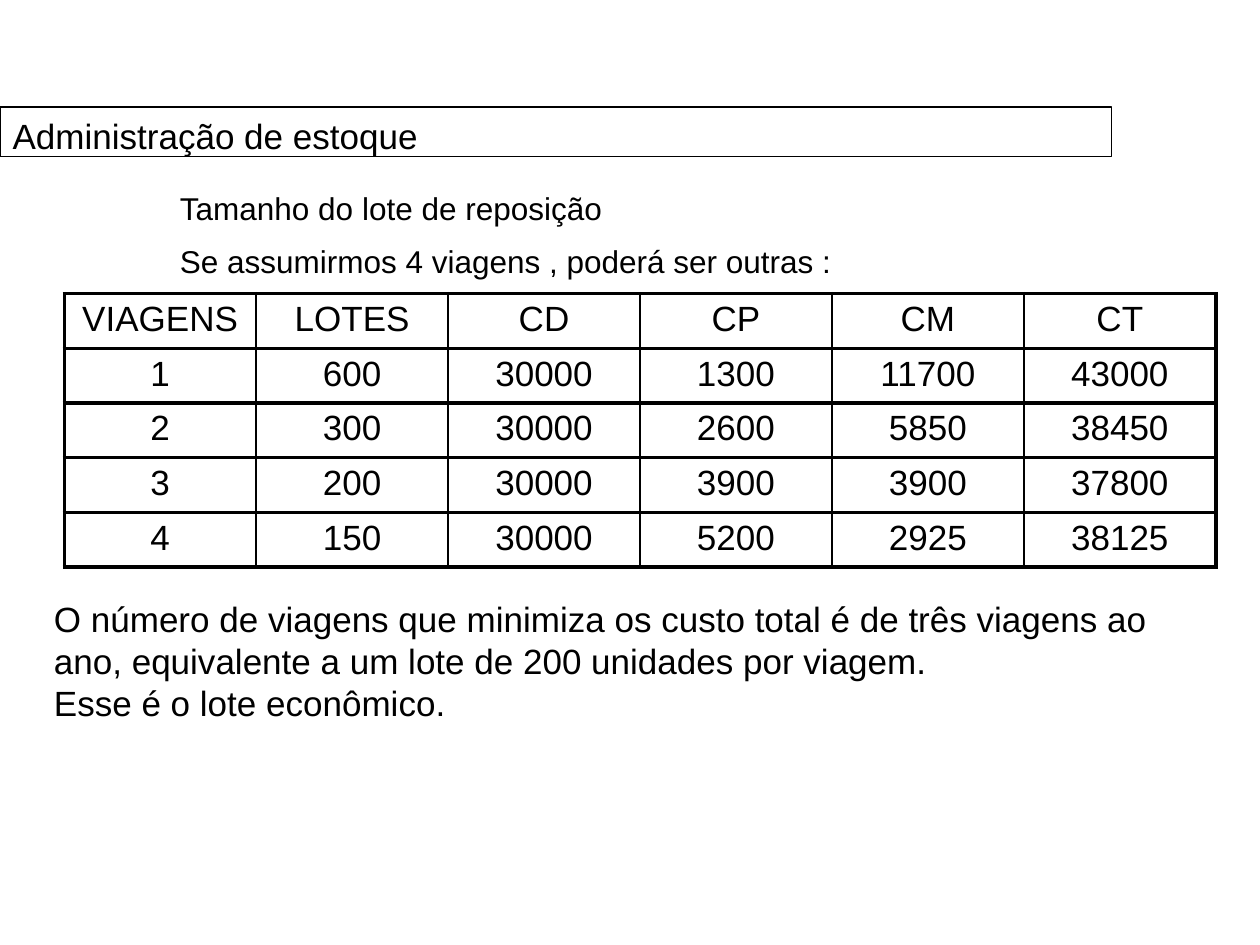
from dataclasses import dataclass

from lxml.etree import SubElement
from pptx import Presentation
from pptx.dml.color import RGBColor
from pptx.enum.text import MSO_ANCHOR, PP_ALIGN
from pptx.oxml.ns import qn
from pptx.util import Inches, Pt

BLACK = "000000"
WHITE = "FFFFFF"
THICK = 2.25
THIN = 1


@dataclass(frozen=True)
class Passage:
    left: float
    top: float
    width: float
    height: float
    lines: tuple[str, ...]
    size: float = 20
    indent: float = 0
    spacing: float = 1.0


def color(value: str) -> RGBColor:
    return RGBColor.from_string(value)


def write(frame, *lines: str, size: float = 20, align=PP_ALIGN.LEFT,
          anchor=MSO_ANCHOR.TOP, indent: float = 0, spacing: float = 1.0) -> None:
    frame.word_wrap = True
    frame.vertical_anchor = anchor
    for index, line in enumerate(lines):
        paragraph = frame.paragraphs[0] if index == 0 else frame.add_paragraph()
        properties = paragraph._p.get_or_add_pPr()
        properties.set("marL", str(Inches(indent)))
        properties.set("indent", "0")
        paragraph.alignment = align
        paragraph.line_spacing = spacing
        paragraph.space_before = Pt(0)
        run = paragraph.add_run()
        run.text = line
        run.font.name = "Arial"
        run.font.size = Pt(size)
        run.font.bold = False
        run.font.color.rgb = color(BLACK)


def place(shape, left: float, top: float, width: float, height: float) -> None:
    shape.left, shape.top = Inches(left), Inches(top)
    shape.width, shape.height = Inches(width), Inches(height)


def add_title(slide, heading: str) -> None:
    title = slide.shapes.title
    place(title, 0, 0.85, 8.82, 0.39)
    title.fill.solid()
    title.fill.fore_color.rgb = color(WHITE)
    title.line.color.rgb = color(BLACK)
    title.line.width = Pt(0.75)
    title.text_frame.margin_top = Inches(0.06)
    write(title.text_frame, heading)


def add_passage(slide, passage: Passage) -> None:
    box = slide.shapes.add_textbox(
        Inches(passage.left), Inches(passage.top),
        Inches(passage.width), Inches(passage.height))
    write(box.text_frame, *passage.lines, size=passage.size,
          indent=passage.indent, spacing=passage.spacing)


def set_borders(cell, **widths: float) -> None:
    properties = cell._tc.get_or_add_tcPr()
    for side, width in widths.items():
        border = SubElement(properties, qn(f"a:ln{side}"), w=str(Pt(width)))
        fill = SubElement(border, qn("a:solidFill"))
        SubElement(fill, qn("a:srgbClr"), val=BLACK)


def add_cost_table(slide, rows: list[tuple[str, ...]]) -> None:
    columns = len(rows[0])
    frame = slide.shapes.add_table(
        len(rows), columns, Inches(0.51), Inches(2.33), Inches(9.14), Inches(2.17))
    table = frame.table
    table.first_row = False
    table.horz_banding = False
    for row, values in enumerate(rows):
        for column, value in enumerate(values):
            cell = table.cell(row, column)
            set_borders(cell,
                        L=THICK if column == 0 else THIN,
                        R=THICK if column == columns - 1 else THIN,
                        T=THICK, B=THICK)
            cell.fill.background()
            write(cell.text_frame, value, align=PP_ALIGN.CENTER)


COSTS = [
    ("VIAGENS", "LOTES", "CD", "CP", "CM", "CT"),
    ("1", "600", "30000", "1300", "11700", "43000"),
    ("2", "300", "30000", "2600", "5850", "38450"),
    ("3", "200", "30000", "3900", "3900", "37800"),
    ("4", "150", "30000", "5200", "2925", "38125"),
]

INTRODUCTION = Passage(
    0.83, 1.33, 8.58, 0.94,
    ("Tamanho do lote de reposição",
     "Se assumirmos 4 viagens , poderá ser outras :"),
    size=18, indent=0.5, spacing=1.4)

CONCLUSION = Passage(
    0.33, 4.69, 9.47, 1.1,
    ("O número de viagens que minimiza os custo total é de três viagens ao ano, "
     "equivalente a um lote de 200 unidades por viagem.",
     "Esse é o lote econômico."))


def main() -> None:
    presentation = Presentation()
    presentation.slide_width = Inches(10)
    presentation.slide_height = Inches(7.5)
    slide = presentation.slides.add_slide(presentation.slide_layouts[5])
    add_passage(slide, INTRODUCTION)
    add_cost_table(slide, COSTS)
    add_title(slide, "Administração de estoque")
    add_passage(slide, CONCLUSION)
    presentation.save("out.pptx")


if __name__ == "__main__":
    main()
